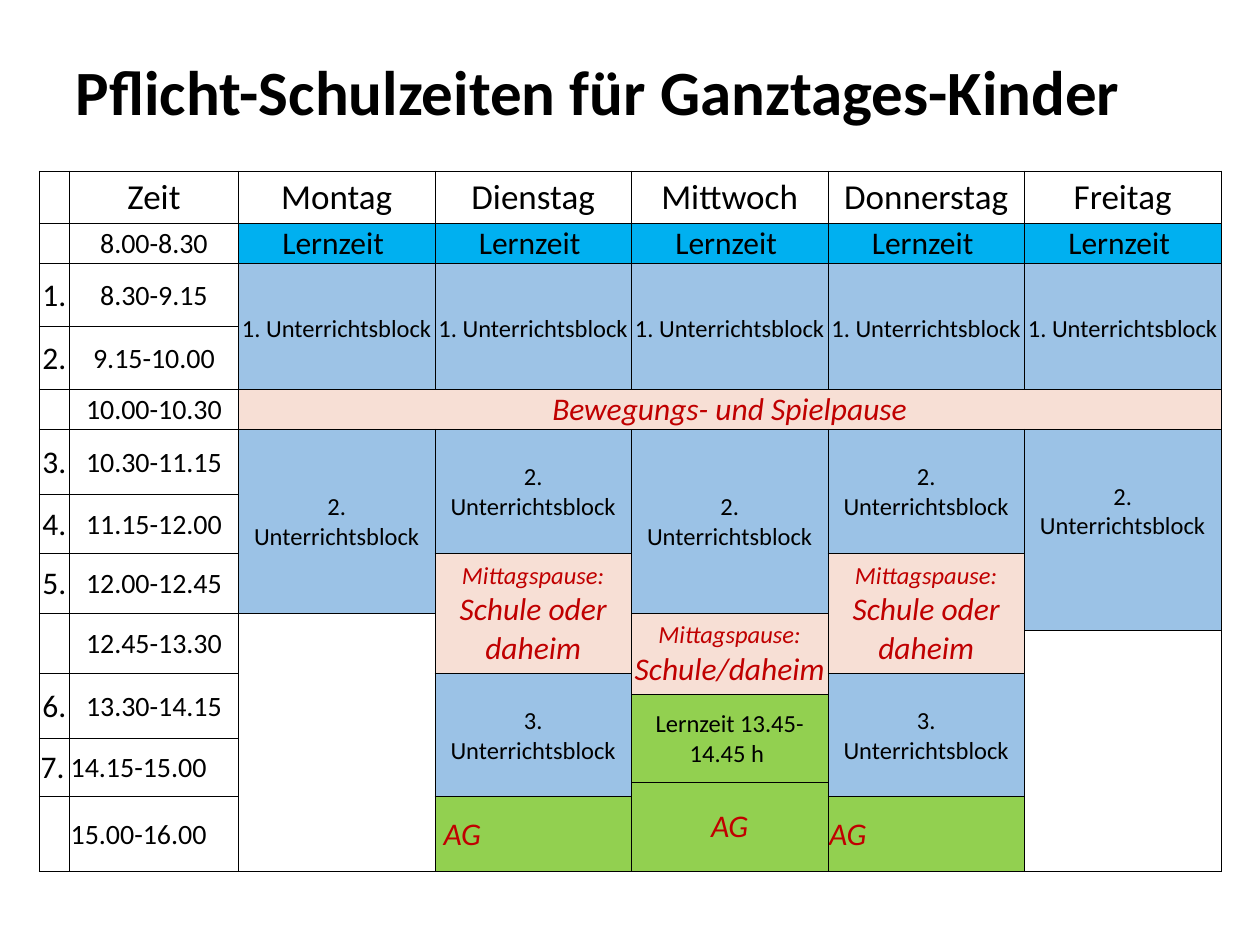
from lxml import etree
from pptx import Presentation
from pptx.dml.color import RGBColor
from pptx.enum.text import MSO_ANCHOR, PP_ALIGN
from pptx.oxml.ns import qn
from pptx.util import Pt

MIDDLE = MSO_ANCHOR.MIDDLE
LEFT, CENTER = PP_ALIGN.LEFT, PP_ALIGN.CENTER
FONT = "Calibri"
BLACK, WHITE, RED = "000000", "FFFFFF", "C00000"
SKY, FIRST_BLUE, BLUE, ROSE, GREEN = "00B0F0", "9DC3E6", "9BC2E6", "F7DFD5", "92D050"

COLUMN_WIDTHS = [17.2, 96.6] + [112.3] * 5
ROW_HEIGHTS = [30, 22.5, 36, 36, 23, 37, 34, 34, 10, 24.5, 12, 25, 25, 8.5, 42.5]
HEADINGS = ["Zeit", "Montag", "Dienstag", "Mittwoch", "Donnerstag", "Freitag"]
MONDAY, TUESDAY, WEDNESDAY, THURSDAY, FRIDAY = range(2, 7)
PERIODS = [
    (1, 1, "", "8.00-8.30", CENTER),
    (2, 1, "1.", "8.30-9.15", CENTER),
    (3, 1, "2.", "9.15-10.00", CENTER),
    (4, 1, "", "10.00-10.30", CENTER),
    (5, 1, "3.", "10.30-11.15", CENTER),
    (6, 1, "4.", "11.15-12.00", CENTER),
    (7, 1, "5.", "12.00-12.45", CENTER),
    (8, 2, "", "12.45-13.30", CENTER),
    (10, 2, "6.", "13.30-14.15", CENTER),
    (12, 2, "7.", "14.15-15.00", LEFT),
    (14, 1, "", "15.00-16.00", LEFT),
]


def color(value):
    """Turn a hex string into a colour."""
    return RGBColor.from_string(value)


def add_run(para, text, size, ink=BLACK, bold=False, italic=False):
    """Append one formatted run to a paragraph."""
    span = para.add_run()
    span.text = text
    font = span.font
    font.name, font.size, font.bold, font.italic = FONT, Pt(size), bold, italic
    font.color.rgb = color(ink)


def add_title(page, text):
    """Place and fill the title placeholder."""
    box = page.shapes.title
    box.left, box.top, box.width, box.height = Pt(36), Pt(9.4), Pt(648), Pt(90)
    box.text_frame.vertical_anchor = MIDDLE
    para = box.text_frame.paragraphs[0]
    para.alignment = LEFT
    para.line_spacing = 0.9
    add_run(para, text, 36, bold=True)


def set_borders(cell, top, bottom):
    """Draw black borders around a cell."""
    properties = cell._tc.get_or_add_tcPr()
    for side, width in (("L", 0.5), ("R", 0.5), ("T", top), ("B", bottom)):
        line = etree.SubElement(properties, qn(f"a:ln{side}"), w=str(Pt(width)))
        fill = etree.SubElement(line, qn("a:solidFill"))
        etree.SubElement(fill, qn("a:srgbClr"), val=BLACK)


def add_grid(page):
    """Add the empty timetable with its sizes and borders."""
    frame = page.shapes.add_table(len(ROW_HEIGHTS), len(COLUMN_WIDTHS), Pt(22.5), Pt(97.8),
                                  Pt(sum(COLUMN_WIDTHS)), Pt(sum(ROW_HEIGHTS)))
    table = frame.table
    table.first_row = table.horz_banding = False
    for column, width in zip(table.columns, COLUMN_WIDTHS):
        column.width = Pt(width)
    for row, height in zip(table.rows, ROW_HEIGHTS):
        row.height = Pt(height)
    for row in range(len(ROW_HEIGHTS)):
        for column in range(len(COLUMN_WIDTHS)):
            cell = table.cell(row, column)
            thick_rows = (0, 4, 8) if column == FRIDAY else (0, 4)
            set_borders(cell, 1 if row - 1 in thick_rows else 0.5, 1 if row in thick_rows else 0.5)
            cell.fill.solid()
            cell.fill.fore_color.rgb = color(WHITE)
            cell.margin_left = cell.margin_right = cell.margin_top = Pt(0.72)
            cell.margin_bottom = Pt(0)
            cell.vertical_anchor = MIDDLE
            para = cell.text_frame.paragraphs[0]
            etree.SubElement(para._p, qn("a:endParaRPr"), sz="400")
    return table


def fill_cell(table, row, column, lines, rows=1, columns=1, fill=WHITE, ink=BLACK, align=CENTER):
    """Merge a block and write its lines, each a list of text and size pairs."""
    cell = table.cell(row, column)
    if rows * columns > 1:
        cell.merge(table.cell(row + rows - 1, column + columns - 1))
    cell.fill.fore_color.rgb = color(fill)
    for index, runs in enumerate(lines):
        frame = cell.text_frame
        para = frame.add_paragraph() if index else frame.paragraphs[0]
        para.alignment = align
        for text, size in runs:
            add_run(para, text, size, ink, italic=ink == RED)
    return cell


def add_lesson(table, number, row, column, rows):
    """Add a numbered lesson block."""
    lines = [[(f"{number}.", 14)], [("Unterrichtsblock", 14)]]
    return fill_cell(table, row, column, lines, rows, fill=BLUE)


def add_lunch(table, row, column, place):
    """Add a lunch break of three rows."""
    lines = [[("Mittagspause:", 14)], [(place, 18)]]
    fill_cell(table, row, column, lines, 3, fill=ROSE, ink=RED)


def add_club(table, row, column, rows, align):
    """Add an afternoon club block."""
    return fill_cell(table, row, column, [[("AG", 18)]], rows, fill=GREEN, ink=RED, align=align)


def fill_frame(table):
    """Write the headings and the period columns."""
    for column, heading in enumerate(HEADINGS, 1):
        fill_cell(table, 0, column, [[(heading, 20)]])
    for row, rows, number, time, align in PERIODS:
        label = [[(number, 18)]] if number else []
        fill_cell(table, row, 0, label, rows, align=align)
        fill_cell(table, row, 1, [[(time, 16)]], rows, align=align)


def fill_days(table):
    """Write the blocks of the five days."""
    for day in range(MONDAY, FRIDAY + 1):
        fill_cell(table, 1, day, [[("Lernzeit ", 18)]], fill=SKY)
        fill_cell(table, 2, day, [[("1. Unterrichtsblock", 14), (" ", 18)]], 2, fill=FIRST_BLUE)
    fill_cell(table, 4, MONDAY, [[("Bewegungs- und Spielpause", 18)]], columns=5, fill=ROSE, ink=RED)

    for day in (MONDAY, WEDNESDAY):
        add_lesson(table, 2, 5, day, 3)
    fill_cell(table, 8, MONDAY, [], 7)

    for day in (TUESDAY, THURSDAY):
        add_lesson(table, 2, 5, day, 2)
        add_lunch(table, 7, day, "Schule oder daheim")
        add_lesson(table, 3, 10, day, 4)
        club = add_club(table, 14, day, 1, LEFT)
        if day == TUESDAY:
            club.margin_left = Pt(5)

    add_lunch(table, 8, WEDNESDAY, "Schule/daheim")
    fill_cell(table, 11, WEDNESDAY, [[("Lernzeit 13.45-14.45 h ", 14)]], 2, fill=GREEN)
    add_club(table, 13, WEDNESDAY, 2, CENTER)

    add_lesson(table, 2, 5, FRIDAY, 4).margin_bottom = Pt(22)
    fill_cell(table, 9, FRIDAY, [], 6)


def main():
    """Build and save the timetable slide."""
    deck = Presentation()
    deck.slide_width, deck.slide_height = Pt(720), Pt(540)
    page = deck.slides.add_slide(deck.slide_layouts[5])
    add_title(page, "Pflicht-Schulzeiten für Ganztages-Kinder")
    table = add_grid(page)
    fill_frame(table)
    fill_days(table)
    deck.save("out.pptx")


if __name__ == "__main__":
    main()
